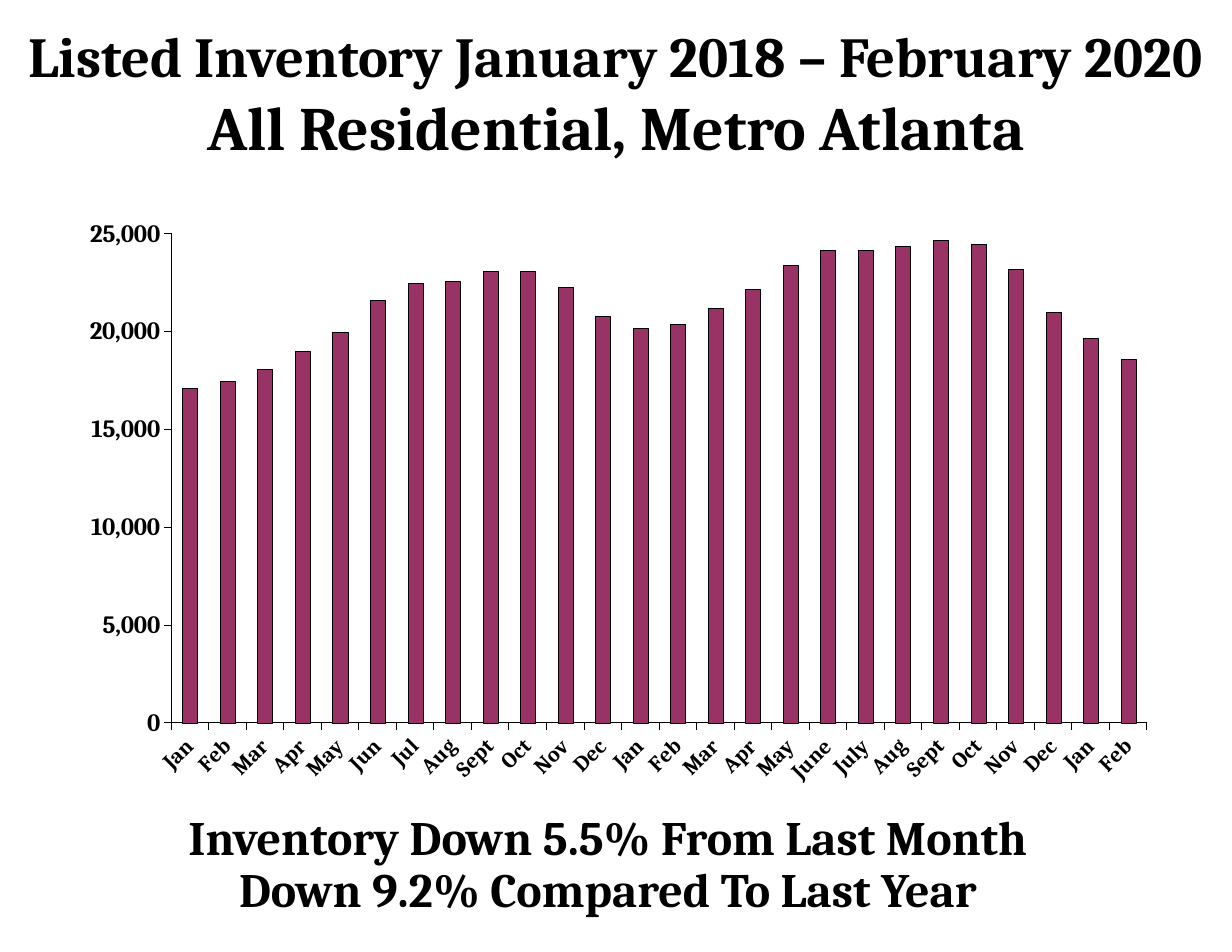
from pptx import Presentation
from pptx.chart.data import CategoryChartData
from pptx.dml.color import RGBColor
from pptx.enum.chart import XL_CHART_TYPE, XL_TICK_LABEL_POSITION, XL_TICK_MARK
from pptx.enum.text import MSO_ANCHOR, MSO_AUTO_SIZE, PP_ALIGN
from pptx.oxml import parse_xml
from pptx.oxml.ns import nsdecls
from pptx.util import Emu, Pt

COLUMNS = XL_CHART_TYPE.COLUMN_CLUSTERED
LABELS_LOW = XL_TICK_LABEL_POSITION.LOW
TICK_OUT, TICK_NONE = XL_TICK_MARK.OUTSIDE, XL_TICK_MARK.NONE
MIDDLE, CENTER, NO_FIT = MSO_ANCHOR.MIDDLE, PP_ALIGN.CENTER, MSO_AUTO_SIZE.NONE
BLACK = RGBColor(0x00, 0x00, 0x00)
PLUM = RGBColor(0x99, 0x33, 0x66)
FONT = "Cambria"
PX = 914400 // 112

# Content
HEADING = [("Listed Inventory January 2018 – February 2020", 36.3),
           ("All Residential, Metro Atlanta", 39.6)]
SUMMARY = [("Inventory Down 5.5% From Last Month", 30.8),
           ("Down 9.2% Compared To Last Year", 30.8)]
INVENTORY = [
    ("Jan", 17100), ("Feb", 17500), ("Mar", 18100), ("Apr", 19000),
    ("May", 20000), ("Jun", 21600), ("Jul", 22500), ("Aug", 22600),
    ("Sept", 23100), ("Oct", 23100), ("Nov", 22300), ("Dec", 20800),
    ("Jan", 20200), ("Feb", 20400), ("Mar", 21200), ("Apr", 22200),
    ("May", 23400), ("June", 24200), ("July", 24200), ("Aug", 24400),
    ("Sept", 24700), ("Oct", 24500), ("Nov", 23200), ("Dec", 21000),
    ("Jan", 19700), ("Feb", 18600),
]

# Places in px: left, top, width, height
HEADING_BOX = (0, 25, 1232, 133)
SUMMARY_BOX = (0, 804, 1216, 124)
CHART_BOX = (52, 174, 1114, 682)
PLOT_AREA = {"x": 0.107, "y": 0.088, "w": 0.876, "h": 0.717}


def emu(box):
    return [Emu(length * PX) for length in box]


def set_font(font, size):
    for name, value in {"name": FONT, "size": Pt(size), "bold": True}.items():
        setattr(font, name, value)
    font.color.rgb = BLACK


def fill_placeholder(holder, box, lines, spacing):
    holder.left, holder.top, holder.width, holder.height = emu(box)
    frame = holder.text_frame
    frame.word_wrap = True
    frame.auto_size = NO_FIT
    frame.vertical_anchor = MIDDLE
    frame.text = "\n".join(text for text, _ in lines)
    for paragraph, (_, size) in zip(frame.paragraphs, lines):
        properties = paragraph._p.get_or_add_pPr()
        properties.set("marL", "0")
        properties.set("indent", "0")
        properties.append(parse_xml(f"<a:buNone {nsdecls('a')}/>"))
        paragraph.alignment = CENTER
        paragraph.line_spacing = spacing
        paragraph.space_before = Pt(0)
        set_font(paragraph.runs[0].font, size)


def format_axis(axis, size, number_format):
    axis.has_major_gridlines = False
    axis.major_tick_mark = TICK_OUT
    axis.minor_tick_mark = TICK_NONE
    axis.format.line.color.rgb = BLACK
    axis.format.line.width = Pt(0.01)
    labels = axis.tick_labels
    labels.number_format = number_format
    labels.number_format_is_linked = False
    set_font(labels.font, size)


deck = Presentation()
deck.slide_width, deck.slide_height = emu((1232, 952))
slide = deck.slides.add_slide(deck.slide_layouts[1])

# Heading and summary
fill_placeholder(slide.shapes.title, HEADING_BOX, HEADING, 1.0)
fill_placeholder(slide.placeholders[1], SUMMARY_BOX, SUMMARY, 0.9)

# Inventory by month
inventory_data = CategoryChartData(number_format="#,##0")
inventory_data.categories = [month for month, _ in INVENTORY]
inventory_data.add_series("Series 1", [listed for _, listed in INVENTORY])
chart = slide.shapes.add_chart(COLUMNS, *emu(CHART_BOX), inventory_data).chart
chart.has_legend = False
chart.has_title = False
set_font(chart.font, 14)

months, listings = chart.category_axis, chart.value_axis
format_axis(months, 14, "General")
format_axis(listings, 16, "#,##0")
months.tick_label_position = LABELS_LOW
for name, value in {"minimum_scale": 0, "maximum_scale": 25000,
                    "major_unit": 5000}.items():
    setattr(listings, name, value)

columns = chart.plots[0]
columns.gap_width = 150
columns.vary_by_categories = False
inventory = columns.series[0]
inventory.format.fill.solid()
inventory.format.fill.fore_color.rgb = PLUM
inventory.format.line.color.rgb = BLACK
inventory.format.line.width = Pt(0.06)

# Slanted month labels and a fixed plot area
chart_xml = chart._chartSpace
chart_xml.xpath(".//c:catAx/c:txPr/a:bodyPr")[0].set("rot", "-2700000")
plot_xml = chart_xml.xpath(".//c:plotArea")[0]
for automatic in plot_xml.xpath("./c:layout"):
    plot_xml.remove(automatic)
modes = "".join(f'<c:{side}Mode val="edge"/>' for side in "xy")
sizes = "".join(f'<c:{side} val="{share}"/>' for side, share in PLOT_AREA.items())
plot_xml.insert(0, parse_xml(
    f'<c:layout {nsdecls("c")}><c:manualLayout><c:layoutTarget val="inner"/>'
    f'{modes}{sizes}</c:manualLayout></c:layout>'))

deck.save("out.pptx")
